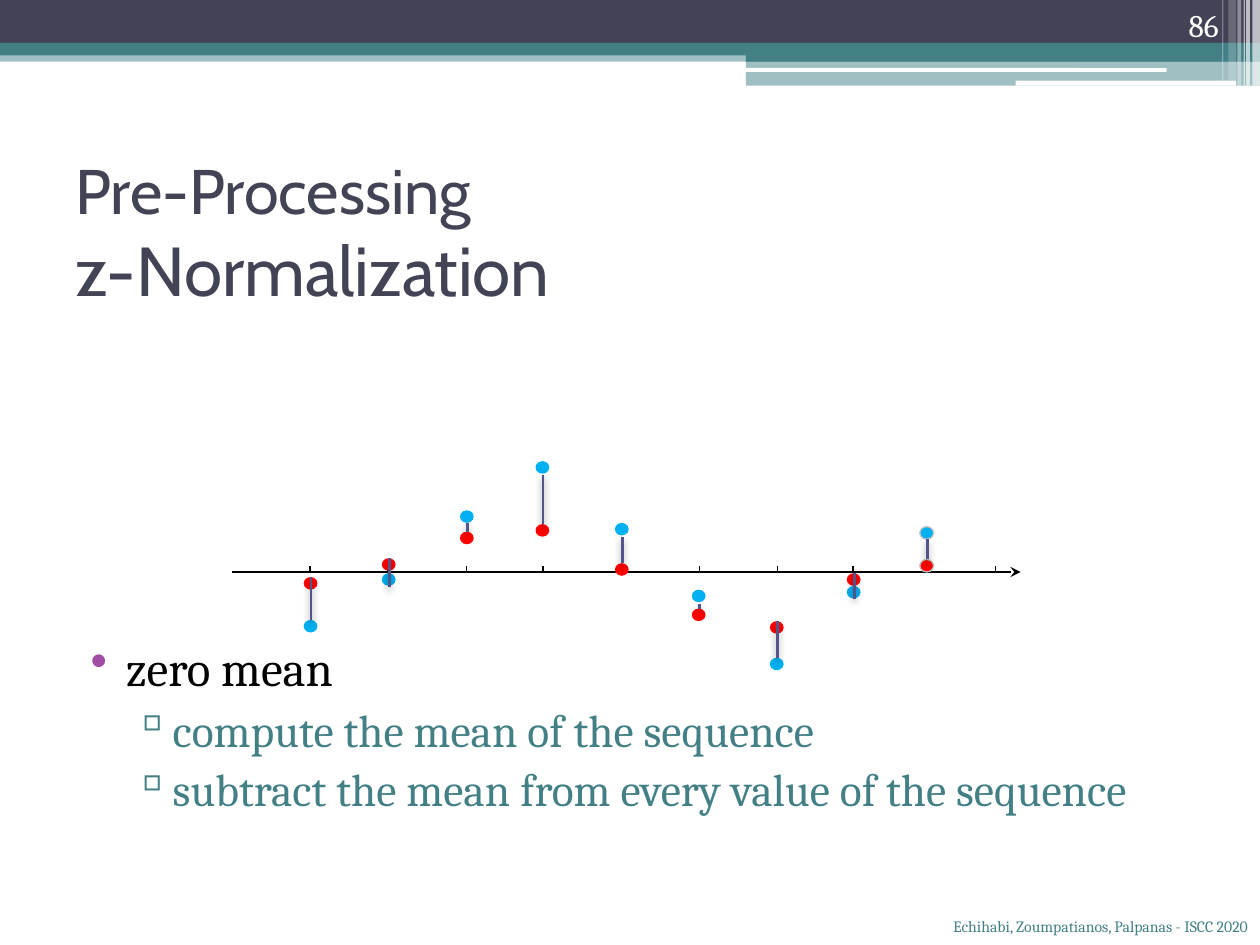
from lxml.etree import SubElement
from pptx import Presentation
from pptx.dml.color import RGBColor
from pptx.enum.shapes import MSO_CONNECTOR, MSO_SHAPE
from pptx.enum.text import MSO_ANCHOR, PP_ALIGN
from pptx.oxml.ns import qn
from pptx.util import Pt

PX = 9144  # 100 px to the inch
COLORS = {
    "navy": "424456", "teal": "438086", "white": "FFFFFF", "black": "000000",
    "purple": "A04DA3", "red": "FF0000", "blue": "00B0F0", "stem": "53548A",
    "outline": "C2C2C2",
}
RGB = {name: RGBColor.from_string(code) for name, code in COLORS.items()}

presentation = Presentation()
presentation.slide_width, presentation.slide_height = 1000 * PX, 750 * PX
slide = presentation.slides.add_slide(presentation.slide_layouts[6])


def add_filled(preset, at, color, opacity=100):
    shape = slide.shapes.add_shape(preset, *(n * PX for n in at))
    shape.shadow.inherit = False
    shape.fill.solid()
    shape.fill.fore_color.rgb = RGB[color]
    shape.line.fill.background()
    if opacity < 100:
        tint = shape.fill._xPr.find(".//" + qn("a:srgbClr"))
        SubElement(tint, qn("a:alpha"), val=str(opacity * 1000))
    return shape


def add_line(start, end, color, width):
    """Draw a straight line; return it with its empty effect list."""
    line = slide.shapes.add_connector(
        MSO_CONNECTOR.STRAIGHT, *(n * PX for n in (*start, *end)))
    line.line.color.rgb = RGB[color]
    line.line.width = Pt(width)
    return line, SubElement(line._element.spPr, qn("a:effectLst"))


# Header bands and the thin stripes at the right edge
for at, color, opacity in [
    ((0, 40, 1000, 9), "teal", 50),
    ((0, 0, 1000, 34), "navy", 100),
    ((0, 34, 1000, 10), "teal", 100),
    ((592, 39, 408, 10), "teal", 100),
    ((592, 48, 408, 20), "teal", 50),
]:
    add_filled(MSO_SHAPE.RECTANGLE, at, color, opacity)
for at in [(591, 54, 335, 3), (806, 64, 175, 4)]:
    add_filled(MSO_SHAPE.ROUNDED_RECTANGLE, at, "white")
for left, width, height, opacity in [
    (994, 6, 68, 65), (989, 3, 68, 65), (987, 1, 68, 60),
    (982, 3, 68, 40), (975, 6, 64, 20), (970, 1, 64, 30),
]:
    add_filled(MSO_SHAPE.RECTANGLE, (left, 0, width, height), "white", opacity)

# Text boxes: place, anchor, paragraphs of (format, bullet, runs)
# A bullet is (mark, color, left margin, indent); runs share a line-broken paragraph
RIGHT = {"alignment": PP_ALIGN.RIGHT}
SPACED = {"space_before": Pt(3)}
DASH = ("▫", "teal", 72, -27)
texts = [
    ((50, 125, 900, 117), MSO_ANCHOR.MIDDLE, [
        ({}, None, [("Pre-Processing", 36, "Cabin", "navy"),
                    ("z-Normalization", 39.6, "Cabin", "navy")])]),
    ((50, 501, 931, 218), MSO_ANCHOR.TOP, [
        ({}, ("•", "purple", 40, -28), [("zero mean", 28, "Cambria", "black")]),
        (SPACED, DASH, [("compute the mean of the sequence", 26, "Cambria", "teal")]),
        (SPACED, DASH, [("subtract the mean from every value of the sequence",
                         26, "Cambria", "teal")])]),
    ((894, 0, 83, 40), MSO_ANCHOR.BOTTOM, [
        (RIGHT, None, [("86", 18, "Cambria", "white")])]),
    ((485, 723, 515, 27), MSO_ANCHOR.TOP, [
        (RIGHT, None, [("Echihabi, Zoumpatianos, Palpanas - ISCC 2020",
                        9, "Cambria", "teal")])]),
]
for at, anchor, paragraphs in texts:
    frame = slide.shapes.add_textbox(*(n * PX for n in at)).text_frame
    frame.word_wrap = True
    frame.vertical_anchor = anchor
    for row, (layout, bullet, runs) in enumerate(paragraphs):
        paragraph = frame.add_paragraph() if row else frame.paragraphs[0]
        for key, value in layout.items():
            setattr(paragraph, key, value)
        if bullet:
            mark, color, margin, indent = bullet
            properties = paragraph._p.get_or_add_pPr()
            properties.set("marL", str(margin * PX))
            properties.set("indent", str(indent * PX))
            bullet_color = SubElement(properties, qn("a:buClr"))
            SubElement(bullet_color, qn("a:srgbClr"), val=COLORS[color])
            SubElement(properties, qn("a:buChar"), char=mark)
            paragraph.level = int(bullet is DASH)
        for position, (words, size, face, color) in enumerate(runs):
            if position:
                paragraph.add_line_break()
            run = paragraph.add_run()
            run.text = words
            for key, value in {"size": Pt(size), "name": face}.items():
                setattr(run.font, key, value)
            run.font.color.rgb = RGB[color]

# Time axis with ticks
AXIS_Y = 454
axis, _ = add_line((184, AXIS_Y), (810, AXIS_Y), "black", 0.75)
SubElement(axis.line._get_or_add_ln(), qn("a:tailEnd"), type="stealth")
for x in (246, 308, 370, 431, 493, 555, 617, 677, 733, 790):
    add_line((x, AXIS_Y), (x, AXIS_Y - 5), "black", 0.75)

# Sequence points: dot left, normalized top, raw top, stem start
DOT_W, DOT_H = 11, 10
points = [
    (241, 458, 492, 492), (303, 443, 455, 466), (365, 422, 405, 415),
    (425, 416, 366, 377), (488, 447, 415, 426), (549, 483, 468, 479),
    (611, 493, 522, 522), (672, 455, 465, 475), (730, 444, 418, 428),
]
for color, column in (("red", 1), ("blue", 2)):
    for point in points:
        dot = add_filled(MSO_SHAPE.OVAL, (point[0], point[column], DOT_W, DOT_H), color)
        if point is points[-1]:
            dot.line.color.rgb = RGB["outline"]
            dot.line.width = Pt(0.75)
for left, normalized, _, start in points:
    x = left + 6
    stem, effects = add_line((x, start), (x, normalized), "stem", 1.5)
    shadow = SubElement(effects, qn("a:outerShdw"), blurRad=str(Pt(4.1)),
                        dist=str(Pt(2)), dir="5400000", rotWithShape="0")
    shade = SubElement(shadow, qn("a:srgbClr"), val=COLORS["black"])
    SubElement(shade, qn("a:alpha"), val="40000")

presentation.save("out.pptx")
